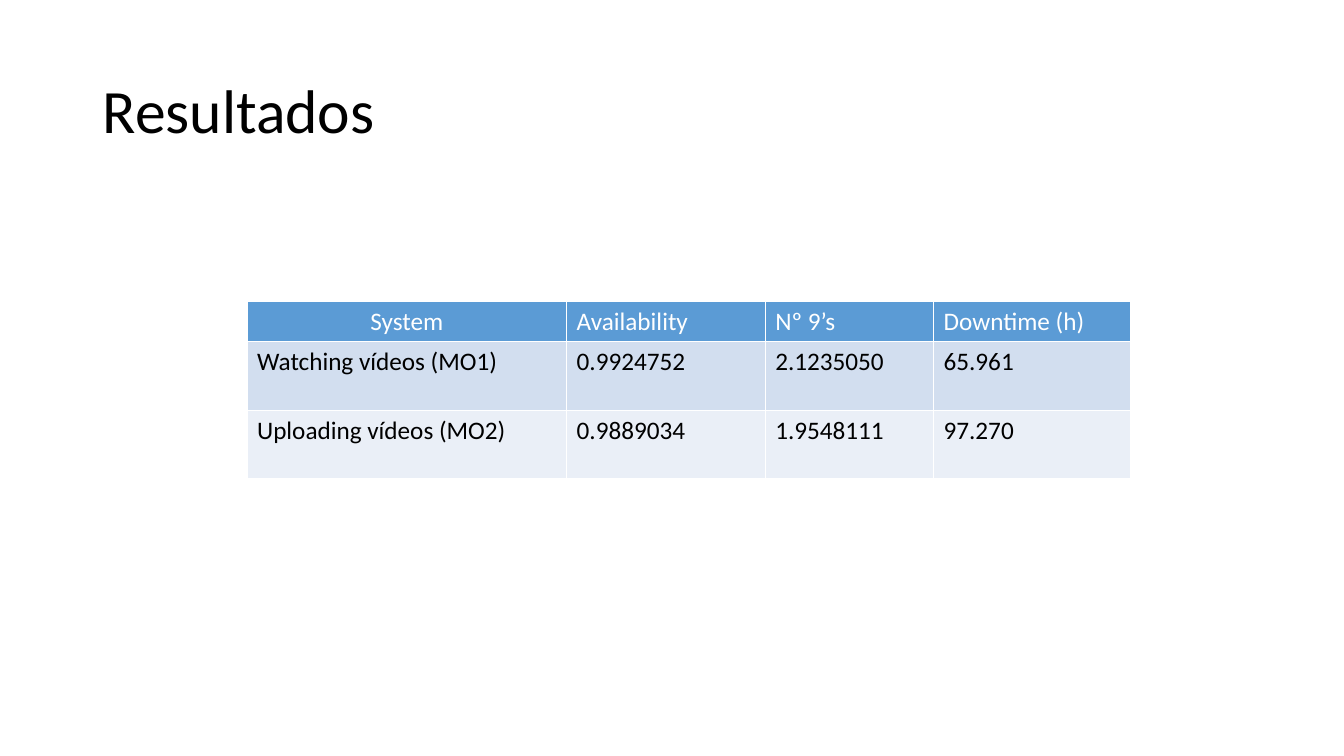
from pptx import Presentation
from pptx import util as u
from pptx.dml.color import RGBColor
from pptx.enum import text


def color(hex_value):
    return RGBColor.from_string(hex_value)


class ResultsSlide:
    font = "Calibri"
    black = "000000"
    white = "FFFFFF"
    header_fill = "5B9BD5"
    band_fills = ("D2DEEF", "EAEFF7")

    def __init__(self, presentation):
        self.slide = presentation.slides.add_slide(presentation.slide_layouts[6])
        background = self.slide.background.fill
        background.solid()
        background.fore_color.rgb = color(self.white)

    def add_run(self, paragraph, content, size, hex_value):
        run = paragraph.add_run()
        run.text = content
        run.font.name = self.font
        run.font.size = u.Pt(size)
        run.font.bold = False
        run.font.color.rgb = color(hex_value)

    def title(self, content, left, top, width, height):
        shape = self.slide.shapes.add_textbox(
            u.Inches(left), u.Inches(top), u.Inches(width), u.Inches(height))
        frame = shape.text_frame
        frame.word_wrap = True
        frame.vertical_anchor = text.MSO_ANCHOR.MIDDLE
        paragraph = frame.paragraphs[0]
        paragraph.line_spacing = 0.9
        self.add_run(paragraph, content, 44, self.black)

    def table(self, rows, left, top, widths, heights):
        """Add a table with a coloured header; white rules come from its style."""
        table = self.slide.shapes.add_table(
            len(rows), len(widths), u.Inches(left), u.Inches(top),
            u.Inches(sum(widths)), u.Inches(sum(heights))).table
        for column, width in zip(table.columns, widths):
            column.width = u.Inches(width)
        for row, height in zip(table.rows, heights):
            row.height = u.Inches(height)
        for row_index, values in enumerate(rows):
            is_header = row_index == 0
            fill = self.header_fill if is_header else self.band_fills[(row_index - 1) % 2]
            for column_index, value in enumerate(values):
                cell = table.cell(row_index, column_index)
                cell.fill.solid()
                cell.fill.fore_color.rgb = color(fill)
                paragraph = cell.text_frame.paragraphs[0]
                if is_header and column_index == 0:
                    paragraph.alignment = text.PP_ALIGN.CENTER
                self.add_run(paragraph, value, 18, self.white if is_header else self.black)


def main():
    presentation = Presentation()
    presentation.slide_width = u.Inches(13.33)
    presentation.slide_height = u.Inches(7.5)

    results = ResultsSlide(presentation)
    results.title("Resultados", 0.92, 0.4, 11.5, 1.45)
    results.table(
        [
            ("System", "Availability", "Nº 9’s", "Downtime (h)"),
            ("Watching vídeos (MO1)", "0.9924752", "2.1235050", "65.961"),
            ("Uploading vídeos (MO2)", "0.9889034", "1.9548111", "97.270"),
        ],
        left=2.45, top=2.99,
        widths=(3.17, 1.97, 1.67, 1.95), heights=(0.4, 0.68, 0.68))
    presentation.save("out.pptx")


if __name__ == "__main__":
    main()
